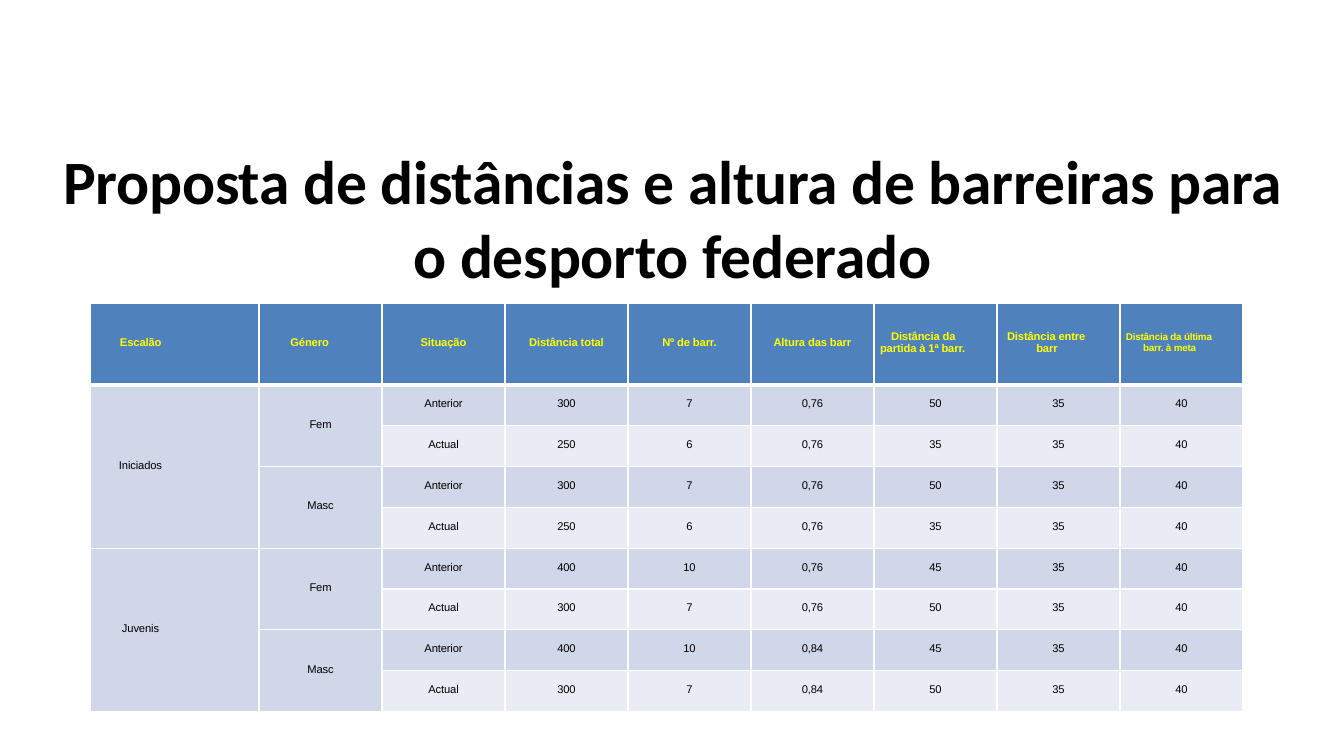
from pptx import Presentation
from pptx.dml.color import RGBColor
from pptx.enum.text import MSO_ANCHOR, PP_ALIGN
from pptx.oxml import parse_xml
from pptx.oxml.ns import nsdecls
from pptx.util import Inches, Pt

MIDDLE = MSO_ANCHOR.MIDDLE
CENTER = PP_ALIGN.CENTER
LEFT = PP_ALIGN.LEFT

TITLE = "Proposta de distâncias e altura de barreiras para o desporto federado"
HEADS = [
    ("Escalão", 8, (0.29, 0)),
    ("Género", 8, (0.31, 0)),
    ("Situação", 8, None),
    ("Distância total", 8, None),
    ("Nº de barr.", 8, None),
    ("Altura das barr", 8, None),
    ("Distância da partida à 1ª barr.", 8, (0.06, 0.11)),
    ("Distância entre barr", 8, (0.39, -0.29)),
    ("Distância da última barr. à meta", 7, (0.23, -0.17)),
]
GROUPS = [("Iniciados", 0.28), ("Juvenis", 0.31)]
GENDERS = ["Fem", "Masc"]
ROWS = [
    ("Anterior", "300", "7", "0,76", "50", "35", "40"),
    ("Actual", "250", "6", "0,76", "35", "35", "40"),
    ("Anterior", "300", "7", "0,76", "50", "35", "40"),
    ("Actual", "250", "6", "0,76", "35", "35", "40"),
    ("Anterior", "400", "10", "0,76", "45", "35", "40"),
    ("Actual", "300", "7", "0,76", "50", "35", "40"),
    ("Anterior", "400", "10", "0,84", "45", "35", "40"),
    ("Actual", "300", "7", "0,84", "50", "35", "40"),
]
BLUE, DARK, PALE = "4F81BC", "D0D7E8", "E9ECF4"
WHITE, BLACK, YELLOW = "FFFFFF", "000000", "FFFF00"
WIDTHS = [1.67] + [1.22] * 8
HEIGHTS = [0.81] + [0.405] * 8


def color(code):
    return RGBColor.from_string(code)


def write(frame, text, size, name, code, bold, space, indent=None):
    para = frame.paragraphs[0]
    para.alignment = LEFT if indent else CENTER
    if indent:
        props = para._p.get_or_add_pPr()
        for key, value in zip(("marL", "indent"), indent):
            props.set(key, str(Inches(value)))
    run = para.add_run()
    run.text = text
    for key, value in {"size": Pt(size), "name": name, "bold": bold}.items():
        setattr(run.font, key, value)
    run.font.color.rgb = color(code)
    run._r.get_or_add_rPr().set("spc", str(space))


def border(cell, row):
    thick = {0: "B", 1: "T"}.get(row)
    for side in "LRTB":
        width = Pt(3 if side == thick else 1)
        cell._tc.get_or_add_tcPr().append(parse_xml(
            f'<a:ln{side} {nsdecls("a")} w="{width}"><a:solidFill>'
            f'<a:srgbClr val="{WHITE}"/></a:solidFill></a:ln{side}>'))


def fill(cell, text, code, size=8, ink=BLACK, bold=False, indent=None):
    cell.fill.solid()
    cell.fill.fore_color.rgb = color(code)
    wraps = indent and cell.is_merge_origin is False
    form = {"margin_left": 0, "margin_top": 0, "margin_bottom": Inches(0.03),
            "margin_right": Inches(0.2 if wraps else 0),
            "vertical_anchor": MIDDLE}
    for key, value in form.items():
        setattr(cell, key, value)
    write(cell.text_frame, text, size, "Arial", ink, bold, -10, indent)


deck = Presentation()
deck.slide_width, deck.slide_height = Inches(13.33), Inches(7.5)
slide = deck.slides.add_slide(deck.slide_layouts[6])

grid = slide.shapes.add_table(
    len(HEIGHTS), len(WIDTHS), Inches(0.9), Inches(3.01),
    Inches(sum(WIDTHS)), Inches(sum(HEIGHTS))).table
grid.first_row = grid.horz_banding = False
for col, width in zip(grid.columns, WIDTHS):
    col.width = Inches(width)
for row, height in zip(grid.rows, HEIGHTS):
    row.height = Inches(height)
for r in range(len(HEIGHTS)):
    for c in range(len(WIDTHS)):
        border(grid.cell(r, c), r)

for c, (text, size, indent) in enumerate(HEADS):
    fill(grid.cell(0, c), text, BLUE, size, YELLOW, True, indent)
for g, (text, left) in enumerate(GROUPS):
    top = 1 + 4 * g
    grid.cell(top, 0).merge(grid.cell(top + 3, 0))
    fill(grid.cell(top, 0), text, DARK, indent=(left, 0))
    for k, gender in enumerate(GENDERS):
        first = top + 2 * k
        grid.cell(first, 1).merge(grid.cell(first + 1, 1))
        fill(grid.cell(first, 1), gender, DARK)
for r, row in enumerate(ROWS):
    for c, text in enumerate(row):
        fill(grid.cell(r + 1, c + 2), text, PALE if r % 2 else DARK)

box = slide.shapes.add_textbox(Inches(0.54), Inches(1.09), Inches(12.26), Inches(1.82))
frame = box.text_frame
form = {"word_wrap": True, "margin_left": 0, "margin_right": 0,
        "margin_top": Inches(0.33), "margin_bottom": 0}
for key, value in form.items():
    setattr(frame, key, value)
write(frame, TITLE, 44, "Calibri", BLACK, True, -20)

deck.save("out.pptx")
